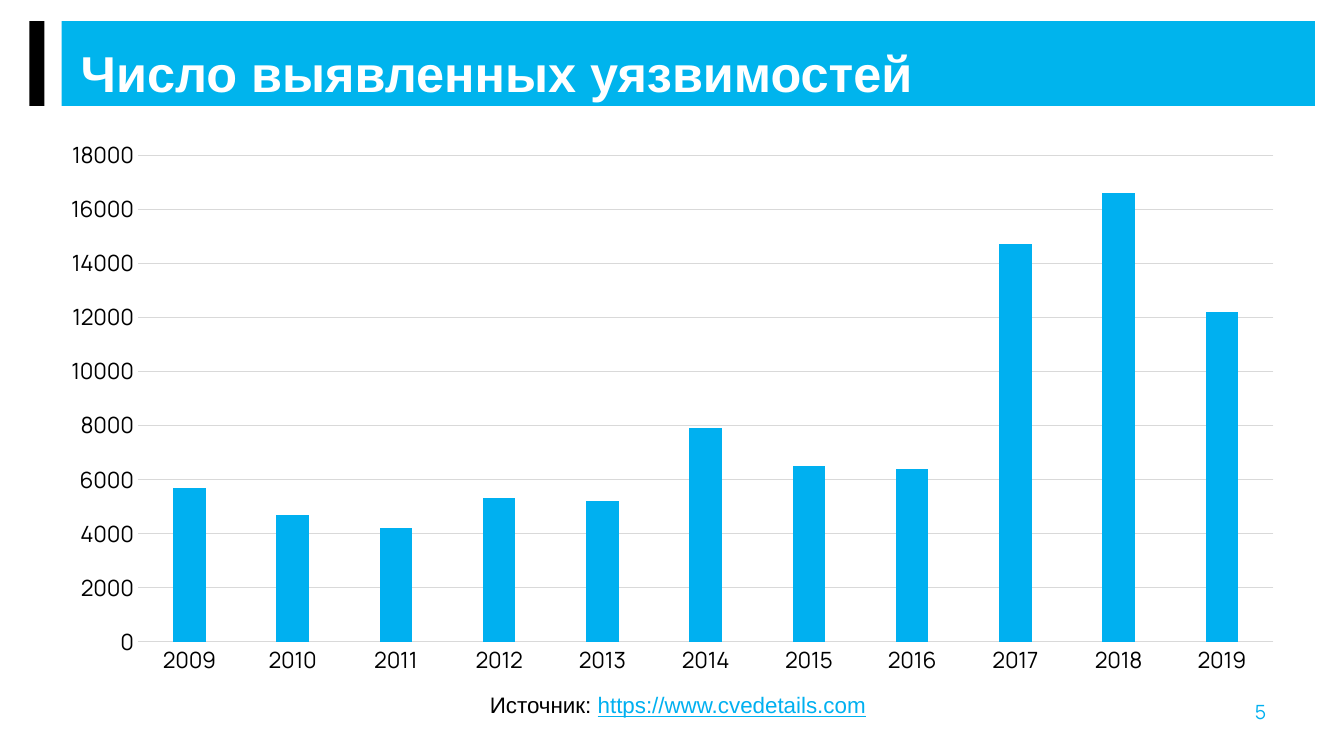
"""Build a slide with a column chart of vulnerabilities found per year."""
from pptx import Presentation
from pptx.chart.data import CategoryChartData
from pptx.dml.color import RGBColor
from pptx.enum.chart import XL_CHART_TYPE, XL_TICK_MARK
from pptx.enum.shapes import MSO_SHAPE
from pptx.enum.text import MSO_ANCHOR, MSO_AUTO_SIZE, PP_ALIGN
from pptx.oxml import parse_xml
from pptx.oxml.ns import nsdecls
from pptx.util import Inches, Pt

BAND = RGBColor(0x00, 0xB4, 0xED)
BLUE = RGBColor(0x00, 0xB0, 0xF0)
BLACK = RGBColor(0x00, 0x00, 0x00)
WHITE = RGBColor(0xFF, 0xFF, 0xFF)
GRAY = RGBColor(0xD9, 0xD9, 0xD9)

deck = Presentation()
deck.slide_width, deck.slide_height = Inches(13.33), Inches(7.5)
slide = deck.slides.add_slide(deck.slide_layouts[5])
shapes = slide.shapes


def area(left, top, width, height):
    """Turn percent shares of the slide into lengths."""
    wide, high = deck.slide_width / 100, deck.slide_height / 100
    return int(left * wide), int(top * high), int(width * wide), int(height * high)


def write(para, text, size, color, face="Arial"):
    """Add one styled run to a paragraph."""
    run = para.add_run()
    run.text = text
    run.font.size, run.font.name = Pt(size), face
    run.font.color.rgb = color
    return run


for left, width, color in ((4.58, 93.25, BAND), (2.18, 1.13, BLACK)):
    bar = shapes.add_shape(MSO_SHAPE.RECTANGLE, *area(left, 2.8, width, 11.2))
    bar.shadow.inherit = False
    bar.fill.solid()
    bar.fill.fore_color.rgb = color
    bar.line.fill.background()

title = shapes.title
title.left, title.top, title.width, title.height = area(5.25, 4.67, 90.85, 9.47)
frame = title.text_frame
frame.auto_size = MSO_AUTO_SIZE.NONE
frame.vertical_anchor = MSO_ANCHOR.BOTTOM
frame.margin_bottom = Inches(0.03)
para = frame.paragraphs[0]
para.alignment = PP_ALIGN.LEFT
para.line_spacing = 0.9
write(para, "Число выявленных уязвимостей", 36, WHITE).font.bold = True
title.element.getparent().append(title.element)

badge = shapes.add_shape(MSO_SHAPE.OVAL, *area(91.6, 90.4, 7.05, 10.27))
badge.shadow.inherit = False
badge.fill.background()
badge.line.fill.background()
badge.text_frame.vertical_anchor = MSO_ANCHOR.TOP
para = badge.text_frame.paragraphs[0]
para.alignment = PP_ALIGN.LEFT
write(para, "5", 14, BLUE, "Manrope")

data = CategoryChartData()
data.categories = [str(year) for year in range(2009, 2020)]
data.add_series("Series 1", (5700, 4700, 4200, 5300, 5200, 7900,
                             6500, 6400, 14700, 16600, 12200))
chart = shapes.add_chart(XL_CHART_TYPE.COLUMN_CLUSTERED,
                         *area(3.45, 17.2, 93.17, 73.6), data).chart
chart.has_title = chart.has_legend = False
chart.font.name, chart.font.size = "Manrope", Pt(10)
chart.font.color.rgb = BLACK
plot = chart.plots[0]
plot.gap_width = 219
plot.vary_by_categories = False
fill = plot.series[0].format.fill
fill.solid()
fill.fore_color.rgb = BLUE

years, counts = chart.category_axis, chart.value_axis
for axis in (years, counts):
    axis.major_tick_mark = axis.minor_tick_mark = XL_TICK_MARK.NONE
    font = axis.tick_labels.font
    font.name, font.size = "Manrope", Pt(16)
    font.color.rgb = BLACK
counts.minimum_scale, counts.maximum_scale, counts.major_unit = 0, 18000, 2000
counts.format.line.fill.background()
for line in (years.format.line, counts.major_gridlines.format.line):
    line.color.rgb = GRAY
    line.width = Pt(0.75)

places = "".join(f'<c:{key} val="{share}"/>' for key, share in (
    ("layoutTarget", "inner"), ("xMode", "edge"), ("yMode", "edge"),
    ("x", 0.073), ("y", 0.045), ("w", 0.907), ("h", 0.875)))
grid = chart.element.chart.plotArea
for old in grid.findall("{*}layout"):
    grid.remove(old)
grid.insert(0, parse_xml(
    f'<c:layout {nsdecls("c")}><c:manualLayout>{places}</c:manualLayout></c:layout>'))

source = shapes.add_textbox(*area(35.71, 90.8, 29.86, 4.93))
source.text_frame.word_wrap = False
source.text_frame.auto_size = MSO_AUTO_SIZE.SHAPE_TO_FIT_TEXT
para = source.text_frame.paragraphs[0]
write(para, "Источник: ", 16, BLACK)
write(para, "https://www.cvedetails.com", 16, BLUE).font.underline = True

deck.save("out.pptx")
